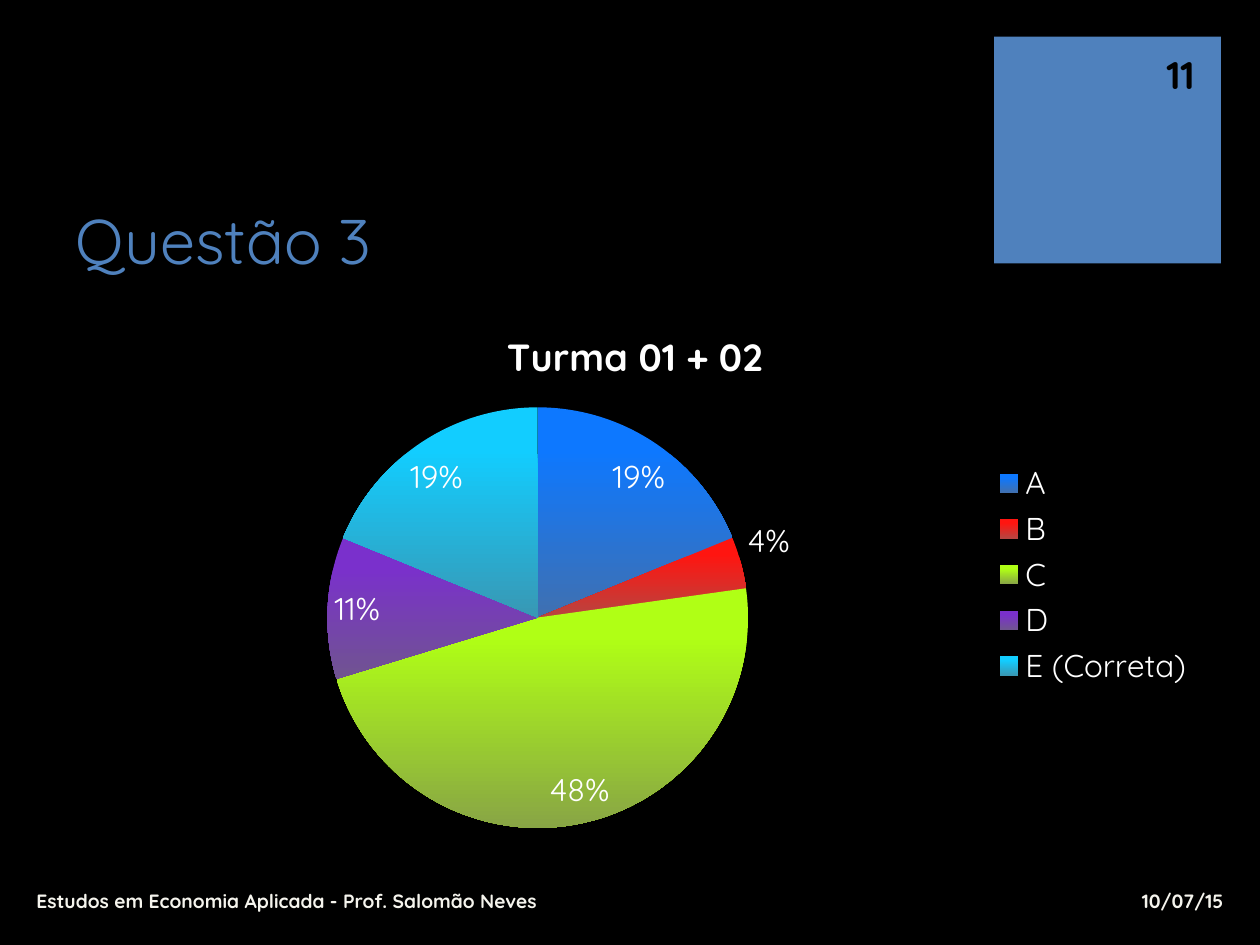
from lxml.etree import SubElement
from pptx import Presentation
from pptx.chart.data import CategoryChartData
from pptx.dml.color import RGBColor
from pptx.enum.chart import XL_CHART_TYPE, XL_LABEL_POSITION, XL_LEGEND_POSITION
from pptx.enum.shapes import MSO_SHAPE
from pptx.enum.text import MSO_ANCHOR, PP_ALIGN
from pptx.oxml.ns import qn
from pptx.util import Inches, Pt

FONT = "Quicksand"
COLORS = {"background": "000000", "accent": "4F81BD", "footer": "F5F4ED",
          "number": "000000", "chart_text": "FFFFFF"}

# Category: value, gradient top colour, gradient bottom colour
ANSWERS = {
    "A": (19, "0D78FF", "4070B0"),
    "B": (4, "FF1510", "B84440"),
    "C": (48, "B0FF15", "88A545"),
    "D": (11, "7A30CC", "705490"),
    "E (Correta)": (19, "12CDFF", "3898B4"),
}


def rgb(name):
    return RGBColor.from_string(COLORS[name])


def style_font(font, size, color, bold=False):
    font.name = FONT
    font.size = Pt(size)
    font.bold = bold
    font.color.rgb = rgb(color)


def write(tf, text, size, color, bold=False, align=PP_ALIGN.LEFT,
          anchor=MSO_ANCHOR.MIDDLE):
    tf.word_wrap = True
    tf.vertical_anchor = anchor
    p = tf.paragraphs[0]
    p.alignment = align
    r = p.add_run()
    r.text = text
    style_font(r.font, size, color, bold)


def add_text(s, box, text, size, color, align=PP_ALIGN.LEFT):
    sp = s.shapes.add_textbox(*map(Inches, box))
    write(sp.text_frame, text, size, color, True, align)


def add_square(s, box):
    sp = s.shapes.add_shape(MSO_SHAPE.RECTANGLE, *map(Inches, box))
    sp.shadow.inherit = False
    sp.fill.solid()
    sp.fill.fore_color.rgb = rgb("accent")
    sp.line.fill.background()


def set_title(s, box, text):
    sp = s.shapes.title
    sp.left, sp.top, sp.width, sp.height = map(Inches, box)
    write(sp.text_frame, text, 36, "accent", anchor=MSO_ANCHOR.BOTTOM)


def fill_gradient(fill, top, bottom):
    fill.gradient()
    fill.gradient_angle = 270
    for stop, color, position in zip(fill.gradient_stops, (top, bottom), (0.2, 1)):
        stop.color.rgb = RGBColor.from_string(color)
        stop.position = position


def place_plot(chart, x, y, w, h):
    plot_area = chart.plots[0]._element.getparent()
    layout = plot_area.find(qn("c:layout"))
    if layout is None:
        layout = SubElement(plot_area, qn("c:layout"))
        plot_area.insert(0, layout)
    manual = SubElement(layout, qn("c:manualLayout"))
    settings = {"layoutTarget": "inner", "xMode": "edge", "yMode": "edge",
                "x": x, "y": y, "w": w, "h": h}
    for tag, value in settings.items():
        SubElement(manual, qn(f"c:{tag}")).set("val", str(value))


def add_pie(s, box, title):
    data = CategoryChartData()
    data.categories = list(ANSWERS)
    data.add_series("Series 1", [value for value, _, _ in ANSWERS.values()])
    chart = s.shapes.add_chart(XL_CHART_TYPE.PIE, *map(Inches, box), data).chart
    style_font(chart.font, 18, "chart_text")

    # Title and legend
    chart.has_title = True
    r = chart.chart_title.text_frame.paragraphs[0].add_run()
    r.text = title
    style_font(r.font, 21.6, "chart_text", True)
    chart.has_legend = True
    chart.legend.position = XL_LEGEND_POSITION.RIGHT
    chart.legend.include_in_layout = False
    style_font(chart.legend.font, 18, "chart_text")

    # Slices and percentages
    plot = chart.plots[0]
    plot.vary_by_categories = True
    for i, (_, top, bottom) in enumerate(ANSWERS.values()):
        fill_gradient(plot.series[0].points[i].format.fill, top, bottom)
    labels = plot.series[0].data_labels
    labels.show_value = False
    labels.show_percentage = True
    labels.number_format = "0%"
    labels.number_format_is_linked = False
    labels.position = XL_LABEL_POSITION.BEST_FIT
    style_font(labels.font, 18, "chart_text")
    place_plot(chart, 0.23, 0.19, 0.37, 0.78)


def main():
    prs = Presentation()
    prs.slide_width, prs.slide_height = Inches(10), Inches(7.5)
    s = prs.slides.add_slide(prs.slide_layouts[5])
    s.background.fill.solid()
    s.background.fill.fore_color.rgb = rgb("background")

    # Header
    add_square(s, (7.89, 0.29, 1.8, 1.8))
    set_title(s, (0.5, 1, 7.12, 1.25), "Questão 3")
    add_text(s, (9.03, 0.39, 0.55, 0.4), "11", 22, "number", PP_ALIGN.RIGHT)

    # Results
    add_pie(s, (0.5, 2.42, 9.08, 4.28), "Turma 01 + 02")

    # Footer
    add_text(s, (0.19, 6.95, 6.57, 0.4),
             "Estudos em Economia Aplicada - Prof. Salomão Neves", 11, "footer")
    add_text(s, (7.89, 6.95, 1.92, 0.4), "10/07/15", 11, "footer", PP_ALIGN.RIGHT)

    prs.save("out.pptx")


if __name__ == "__main__":
    main()
